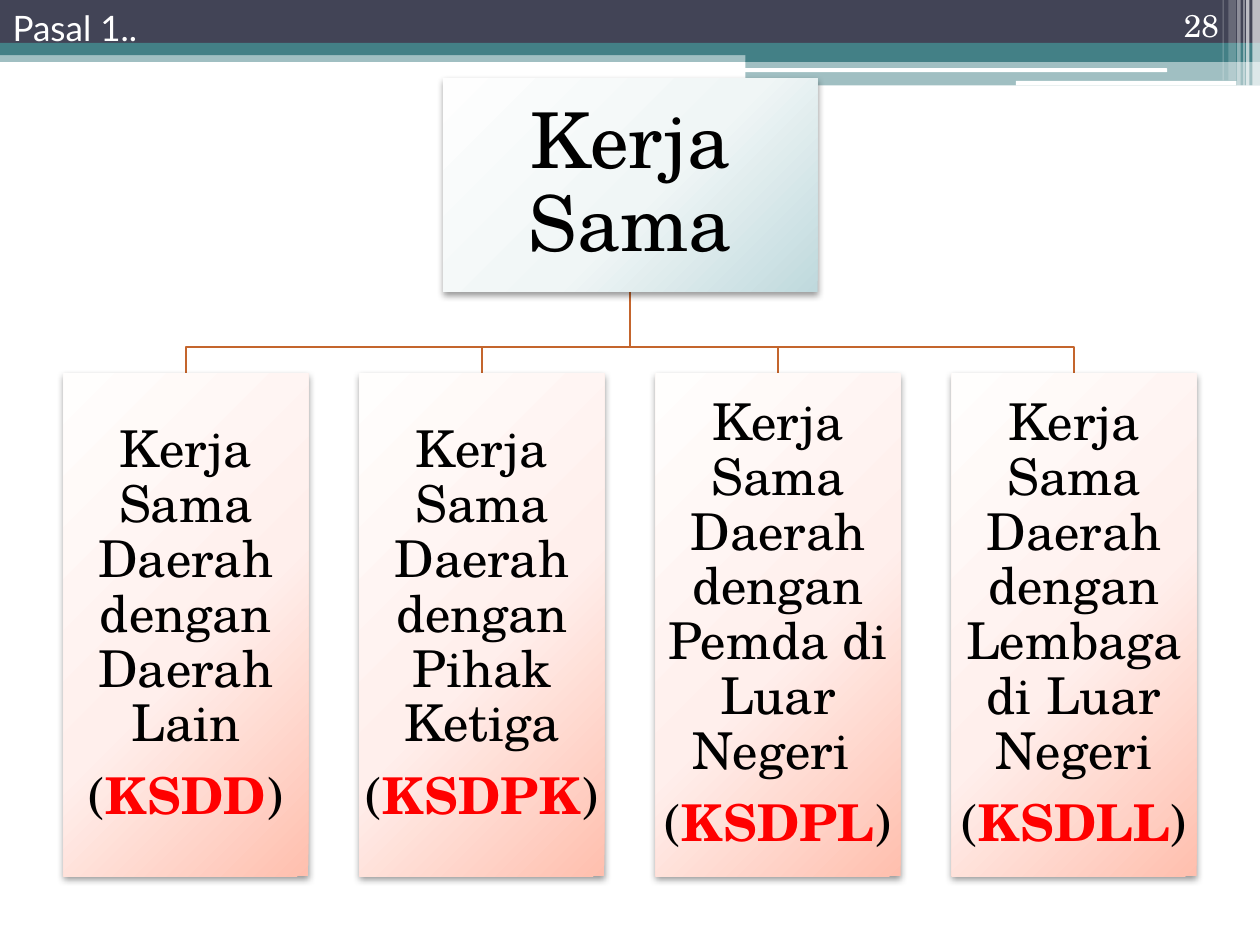
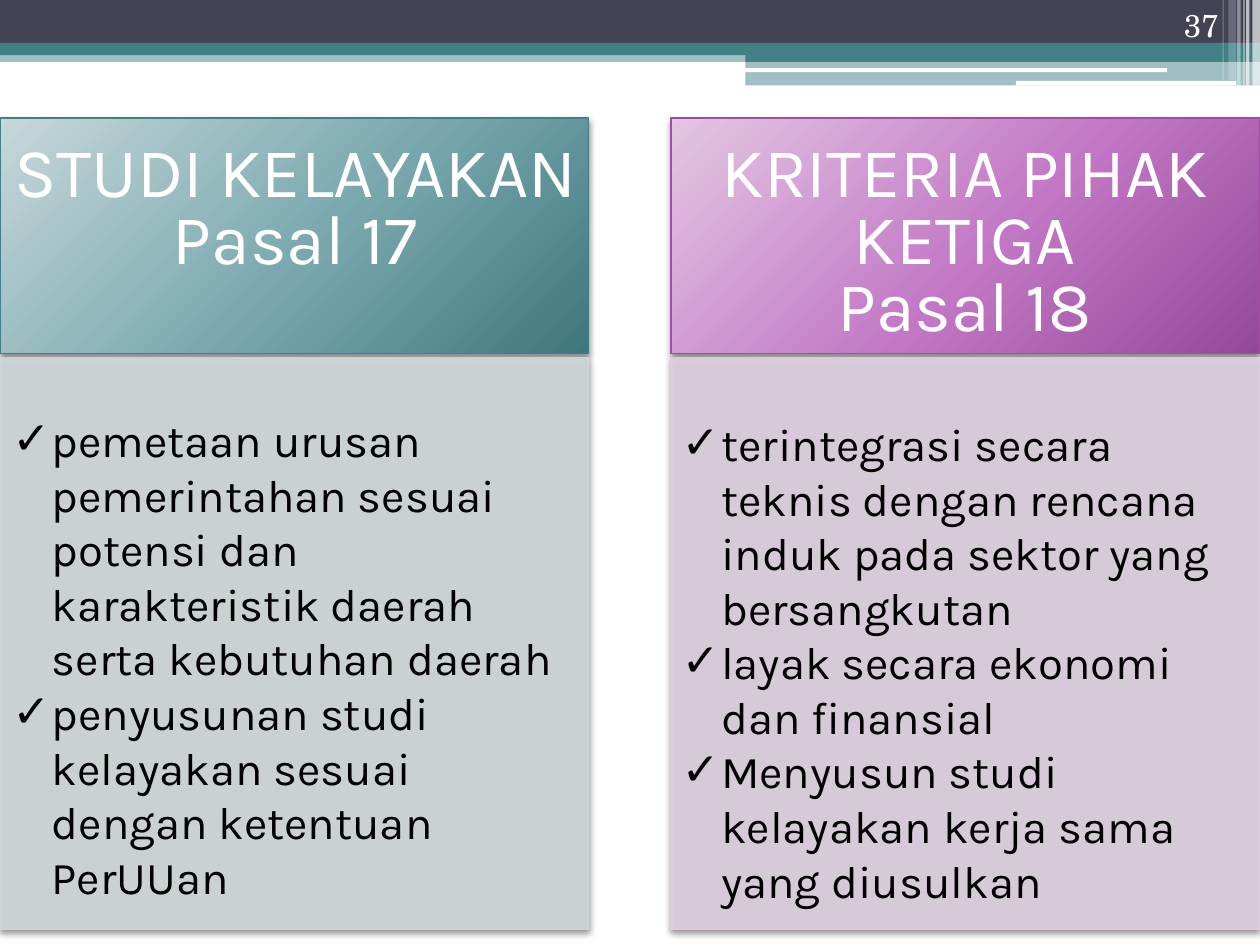
import pptx
import pptx.util
import pptx.dml.color
import pptx.enum.shapes
import pptx.enum.text
import pptx.oxml
import pptx.oxml.ns
from lxml import etree

Pt = pptx.util.Pt
RGBColor = pptx.dml.color.RGBColor
SHAPE = pptx.enum.shapes.MSO_SHAPE
ALIGN = pptx.enum.text.PP_ALIGN
ANCHOR = pptx.enum.text.MSO_ANCHOR
qn = pptx.oxml.ns.qn

# Colours and fonts
WHITE = RGBColor(0xFF, 0xFF, 0xFF)
BLACK = RGBColor(0, 0, 0)
RED = RGBColor(0xFF, 0, 0)
SLATE = RGBColor(0x42, 0x44, 0x56)
TEAL = RGBColor(0x43, 0x80, 0x86)
PURPLE = RGBColor(0xA0, 0x4D, 0xA3)
ORANGE = RGBColor(0xC4, 0x65, 0x2D)
PALE_TEAL = RGBColor(0xCF, 0xD8, 0xD9)
PALE_PURPLE = RGBColor(0xDF, 0xD0, 0xE0)
ROOT_GRADIENT = ["FEFEFE", "F0F6F6", "BFD9DD"]
CARD_GRADIENT = ["FFFEFD", "FFEFEC", "FFBFAE"]
TEAL_GRADIENT = ["C7D7DA", "77A7AD", "3E777D"]
PURPLE_GRADIENT = ["E2C6E3", "C277C5", "954898"]
SERIF, SANS, TITLE = "TeX Gyre Schola", "Karla", "Lato"


def add_box(s, box, fill, alpha=None, line=None, shadow=None, kind=SHAPE.RECTANGLE):
    """Draw a shape; a list as fill is a gradient, alpha and shadow are percentages."""
    sp = s.shapes.add_shape(kind, *map(Pt, box))
    sp.shadow.inherit = False
    spPr = sp.element.spPr
    if isinstance(fill, list):
        sp.fill.background()
        stops = "".join(f'<a:gs pos="{pos}"><a:srgbClr val="{c}"/></a:gs>'
                        for pos, c in zip((0, 55000, 100000), fill))
        spPr.replace(spPr.find(qn("a:noFill")), pptx.oxml.parse_xml(
            f'<a:gradFill {pptx.oxml.ns.nsdecls("a")} rotWithShape="1"><a:gsLst>{stops}</a:gsLst>'
            '<a:path path="circle"><a:fillToRect l="-40000" t="-90000" r="140000" b="190000"/>'
            '</a:path></a:gradFill>'))
    else:
        sp.fill.solid()
        sp.fill.fore_color.rgb = fill
    if line is None:
        sp.line.fill.background()
    else:
        sp.line.color.rgb = line
        sp.line.width = Pt(0.75)
    if alpha:
        for clr in spPr.iter(qn("a:srgbClr")):
            etree.SubElement(clr, qn("a:alpha"), val=str(alpha * 1000))
    if shadow:
        spPr.find(qn("a:effectLst")).append(pptx.oxml.parse_xml(
            f'<a:outerShdw {pptx.oxml.ns.nsdecls("a")} blurRad="{Pt(4)}" dist="{Pt(2)}" '
            'dir="5400000" rotWithShape="0"><a:srgbClr val="000000">'
            f'<a:alpha val="{shadow * 1000}"/></a:srgbClr></a:outerShdw>'))
    return sp


def write(sp, paragraphs, font, size, color, para, frame=None, bullet=None):
    """Fill a shape with paragraphs, each a list of (text, is_code) runs."""
    tf = sp.text_frame
    for name, value in {"word_wrap": True, "vertical_anchor": ANCHOR.TOP, **(frame or {})}.items():
        setattr(tf, name, value)
    for i, runs in enumerate(paragraphs):
        p = tf.paragraphs[0] if i == 0 else tf.add_paragraph()
        if bullet:
            pPr = p._p.get_or_add_pPr()
            pPr.set("marL", str(Pt(22.5)))
            pPr.set("indent", str(-Pt(22.5)))
            etree.SubElement(pPr, qn("a:buFont"), typeface=font)
            etree.SubElement(pPr, qn("a:buChar"), char=bullet)
        for name, value in para.items():
            setattr(p, name, value)
        for text, is_code in runs:
            r = p.add_run()
            r.text = text
            for name, value in {"name": font, "size": Pt(size), "bold": is_code}.items():
                setattr(r.font, name, value)
            r.font.color.rgb = RED if is_code else color


prs = pptx.Presentation()
prs.slide_width, prs.slide_height = Pt(720), Pt(540)
tree_slide = prs.slides.add_slide(prs.slide_layouts[5])
study_slide = prs.slides.add_slide(prs.slide_layouts[6])

# Header bands, moved to the slide master so that both slides share them
bands = [
    ((0, 28.8, 720, 6.6), TEAL, 50),
    ((0, 0, 720, 24.5), SLATE, None),
    ((0, 24.5, 720, 7), TEAL, None),
    ((426, 28.2, 294, 7.2), TEAL, None),
    ((426, 34.8, 294, 14), TEAL, 50),
    ((425.5, 39, 241.5, 2.2), WHITE, None),
    ((580.5, 46.2, 126, 2.6), WHITE, None),
    ((715.7, 0, 4.3, 49), WHITE, 65),
    ((712, 0, 2, 49), WHITE, 65),
    ((710.5, 0, 0.7, 49), WHITE, 60),
    ((707, 0, 2, 49), WHITE, 40),
    ((702, 0, 4.3, 46), WHITE, 20),
    ((698.6, 0, 0.7, 46), WHITE, 30),
]
master_tree = prs.slide_master.shapes.element
for i, (box, color, alpha) in enumerate(bands):
    is_bar = color == WHITE and alpha is None
    kind = SHAPE.ROUNDED_RECTANGLE if is_bar else SHAPE.RECTANGLE
    band = add_box(tree_slide, box, color, alpha, kind=kind)
    master_tree.insert(2 + i, band.element)

# Page numbers
for s, number in ((tree_slide, "28"), (study_slide, "37")):
    sp = s.shapes.add_textbox(Pt(643.5), Pt(0), Pt(60), Pt(28.8))
    write(sp, [[(number, False)]], SERIF, 18, WHITE, {"alignment": ALIGN.RIGHT},
          {"vertical_anchor": ANCHOR.BOTTOM})

# Slide 1: title
s = tree_slide
title = s.shapes.title
for name, value in {"left": 0, "top": 0, "width": 174, "height": 31.5}.items():
    setattr(title, name, Pt(value))
write(title, [[("Pasal 1..", False)]], TITLE, 20, WHITE, {"alignment": ALIGN.LEFT},
      {"auto_size": pptx.enum.text.MSO_AUTO_SIZE.NONE})

# Slide 1: tree of cooperation types
cards = [
    ("Kerja Sama Daerah dengan Daerah Lain", "KSDD"),
    ("Kerja Sama Daerah dengan Pihak Ketiga", "KSDPK"),
    ("Kerja Sama Daerah dengan Pemda di Luar Negeri ", "KSDPL"),
    ("Kerja Sama Daerah dengan Lembaga di Luar Negeri", "KSDLL"),
]
CARD_LEFT, CARD_TOP, CARD_W, CARD_H, CARD_STEP = 36.2, 213.2, 140, 287.5, 169.2
ROOT_BOTTOM, BRANCH_Y, CENTRE = 166.7, 198.3, 360
lefts = [CARD_LEFT + i * CARD_STEP for i in range(len(cards))]

for left in lefts:
    x = left + CARD_W / 2
    fb = s.shapes.build_freeform(Pt(CENTRE), Pt(ROOT_BOTTOM))
    fb.add_line_segments([(Pt(CENTRE), Pt(BRANCH_Y)), (Pt(x), Pt(BRANCH_Y)),
                          (Pt(x), Pt(CARD_TOP))], close=False)
    branch = fb.convert_to_shape()
    branch.shadow.inherit = False
    branch.fill.background()
    branch.line.color.rgb = ORANGE
    branch.line.width = Pt(1.5)

margins = ("margin_left", "margin_top", "margin_right", "margin_bottom")
frame = {"vertical_anchor": ANCHOR.MIDDLE, **dict.fromkeys(margins, Pt(1.5))}
para = {"alignment": ALIGN.CENTER, "line_spacing": 0.9}
root = add_box(s, (253.2, 44.7, 214, 122), ROOT_GRADIENT, shadow=40)
write(root, [[("Kerja Sama", False)]], SERIF, 44, BLACK, {**para, "space_after": Pt(15)}, frame)
for left, (text, code) in zip(lefts, cards):
    card = add_box(s, (left, CARD_TOP, CARD_W, CARD_H), CARD_GRADIENT, shadow=40)
    write(card, [[(text, False)], [("(", False), (code, True), (")", False)]],
          SERIF, 29, BLACK, {**para, "space_after": Pt(10)}, frame)

# Slide 2: two columns, each with a heading and a checklist
s = study_slide
columns = [
    (0, 0, 232, TEAL_GRADIENT, TEAL, PALE_TEAL, ["STUDI KELAYAKAN", "Pasal 17"],
     ["pemetaan urusan pemerintahan sesuai potensi dan karakteristik daerah serta kebutuhan daerah",
      "penyusunan studi kelayakan sesuai dengan ketentuan PerUUan"]),
    (383.5, 382.5, 234.2, PURPLE_GRADIENT, PURPLE, PALE_PURPLE,
     ["KRITERIA PIHAK KETIGA", "Pasal 18"],
     ["terintegrasi secara teknis dengan rencana induk pada sektor yang bersangkutan",
      "layak secara ekonomi dan finansial",
      "Menyusun studi kelayakan kerja sama yang diusulkan"]),
]
for left, text_left, list_top, gradient, edge, pale, heading, items in columns:
    add_box(s, (left, 67.5, 336.5, 134.5), gradient, line=edge, shadow=45)
    add_box(s, (left, 204.5, 336.5, 326.5), pale, alpha=90, line=pale, shadow=45)
    sp = s.shapes.add_textbox(Pt(text_left), Pt(78.5), Pt(337.5), Pt(124))
    write(sp, [[(text, False)] for text in heading], SANS, 40, WHITE,
          {"alignment": ALIGN.CENTER, "line_spacing": 0.8})
    sp = s.shapes.add_textbox(Pt(text_left), Pt(list_top), Pt(337.5), Pt(291))
    write(sp, [[(text, False)] for text in items], SANS, 26, BLACK,
          {"alignment": ALIGN.LEFT}, bullet="✓")

prs.save("out.pptx")
